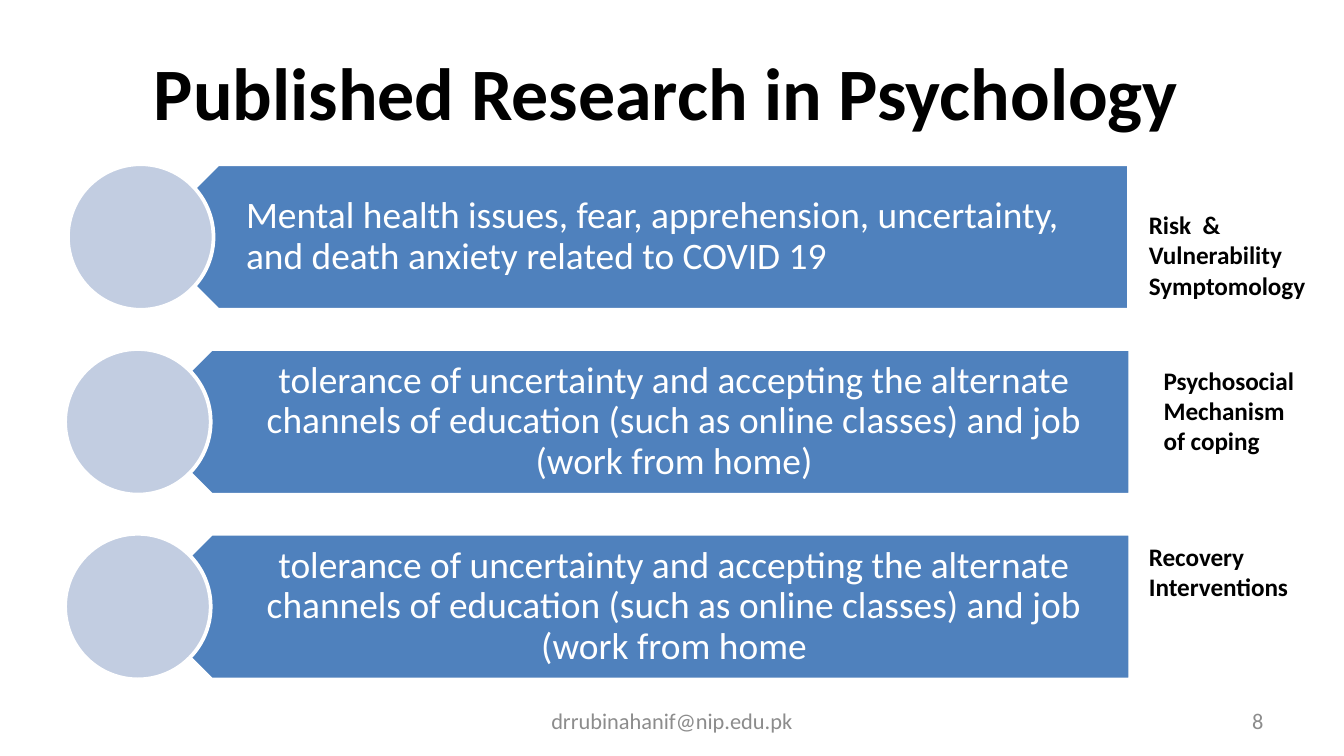
"""Build the slide on published research in psychology."""
from pptx import Presentation
from pptx.dml.color import RGBColor
from pptx.enum.shapes import MSO_SHAPE
from pptx.enum.text import MSO_ANCHOR, PP_ALIGN
from pptx.util import Pt

TITLE = "Published Research in Psychology"
COPING = ("tolerance of uncertainty and accepting the alternate channels of education "
          "(such as online classes) and job (work from home")
ROWS = [
    dict(text="Mental health issues, fear, apprehension, uncertainty, and death anxiety "
              "related to COVID 19",
         align=PP_ALIGN.LEFT, circle=36.4, plate=77.8, right=604.8),
    dict(text=COPING + ")", align=PP_ALIGN.CENTER, circle=34.9, plate=74.2, right=605.5),
    dict(text=COPING, align=PP_ALIGN.CENTER, circle=34.9, plate=74.2, right=605.5),
]
NOTES = [
    (["Risk  & Vulnerability", "Symptomology"], (608.4, 108.7, 98.9, 56.2)),
    (["Psychosocial", "Mechanism of coping"], (616.3, 192.2, 90.7, 56.2)),
    (["Recovery Interventions"], (608.4, 286.6, 90.7, 40.3)),
]
FOOTERS = [
    ("drrubinahanif@nip.edu.pk", (246, 375.4, 228, 21.6), PP_ALIGN.CENTER),
    ("8", (516, 375.4, 168, 21.6), PP_ALIGN.RIGHT),
]
THEME = dict(
    plate="4F81BD", circle="C2CDE1", edge="FFFFFF",
    title=dict(size=Pt(39.6), bold=True, color="000000"),
    body=dict(size=Pt(20), bold=False, color="FFFFFF"),
    note=dict(size=Pt(13.5), bold=True, color="000000"),
    footer=dict(size=Pt(12), bold=False, color="8C8C8C"),
)
ROW_TOP, ROW_STEP, ROW_HEIGHT, TEXT_SHIFT = 88, 99, 78, 19.5


def set_attributes(target, values):
    for name, value in values.items():
        setattr(target, name, value)


def write(frame, lines, style, align=PP_ALIGN.LEFT, spacing=1.0, **frame_values):
    set_attributes(frame, dict(word_wrap=True, **frame_values))
    for index, line in enumerate(lines):
        para = frame.add_paragraph() if index else frame.paragraphs[0]
        set_attributes(para, dict(alignment=align, line_spacing=spacing))
        span = para.add_run()
        span.text = line
        set_attributes(span.font, dict(name="Calibri", size=style["size"], bold=style["bold"]))
        span.font.color.rgb = RGBColor.from_string(style["color"])


def add_text(page, place, lines, style, **values):
    box = page.shapes.add_textbox(*map(Pt, place))
    write(box.text_frame, lines, style, **values)


def add_outline(page, kind, place, fill, rotation=0):
    shape = page.shapes.add_shape(kind, *map(Pt, place))
    shape.rotation = rotation
    shape.shadow.inherit = False
    shape.fill.solid()
    shape.fill.fore_color.rgb = RGBColor.from_string(fill)
    shape.line.color.rgb = RGBColor.from_string(THEME["edge"])
    shape.line.width = Pt(2)


def add_row(page, row, top):
    left, width = row["plate"], row["right"] - row["plate"]
    add_outline(page, MSO_SHAPE.PENTAGON, (left, top, width, ROW_HEIGHT), THEME["plate"], 180)
    add_text(page, (left + TEXT_SHIFT, top, width - TEXT_SHIFT, ROW_HEIGHT), [row["text"]],
             THEME["body"], align=row["align"], spacing=0.9,
             vertical_anchor=MSO_ANCHOR.MIDDLE, margin_left=Pt(34.5), margin_right=Pt(11.5),
             margin_top=Pt(6), margin_bottom=Pt(6))
    add_outline(page, MSO_SHAPE.OVAL, (row["circle"], top, ROW_HEIGHT, ROW_HEIGHT),
                THEME["circle"])


def main():
    deck = Presentation()
    set_attributes(deck, dict(slide_width=Pt(720), slide_height=Pt(405)))
    page = deck.slides.add_slide(deck.slide_layouts[5])
    title = page.shapes.title
    set_attributes(title, dict(left=Pt(36), top=Pt(22), width=Pt(642), height=Pt(53)))
    write(title.text_frame, [TITLE], THEME["title"], align=PP_ALIGN.CENTER,
          vertical_anchor=MSO_ANCHOR.MIDDLE)
    for index, row in enumerate(ROWS):
        add_row(page, row, ROW_TOP + index * ROW_STEP)
    for lines, place in NOTES:
        add_text(page, place, lines, THEME["note"])
    for text, place, align in FOOTERS:
        add_text(page, place, [text], THEME["footer"], align=align,
                 vertical_anchor=MSO_ANCHOR.MIDDLE)
    deck.save("out.pptx")


if __name__ == "__main__":
    main()
